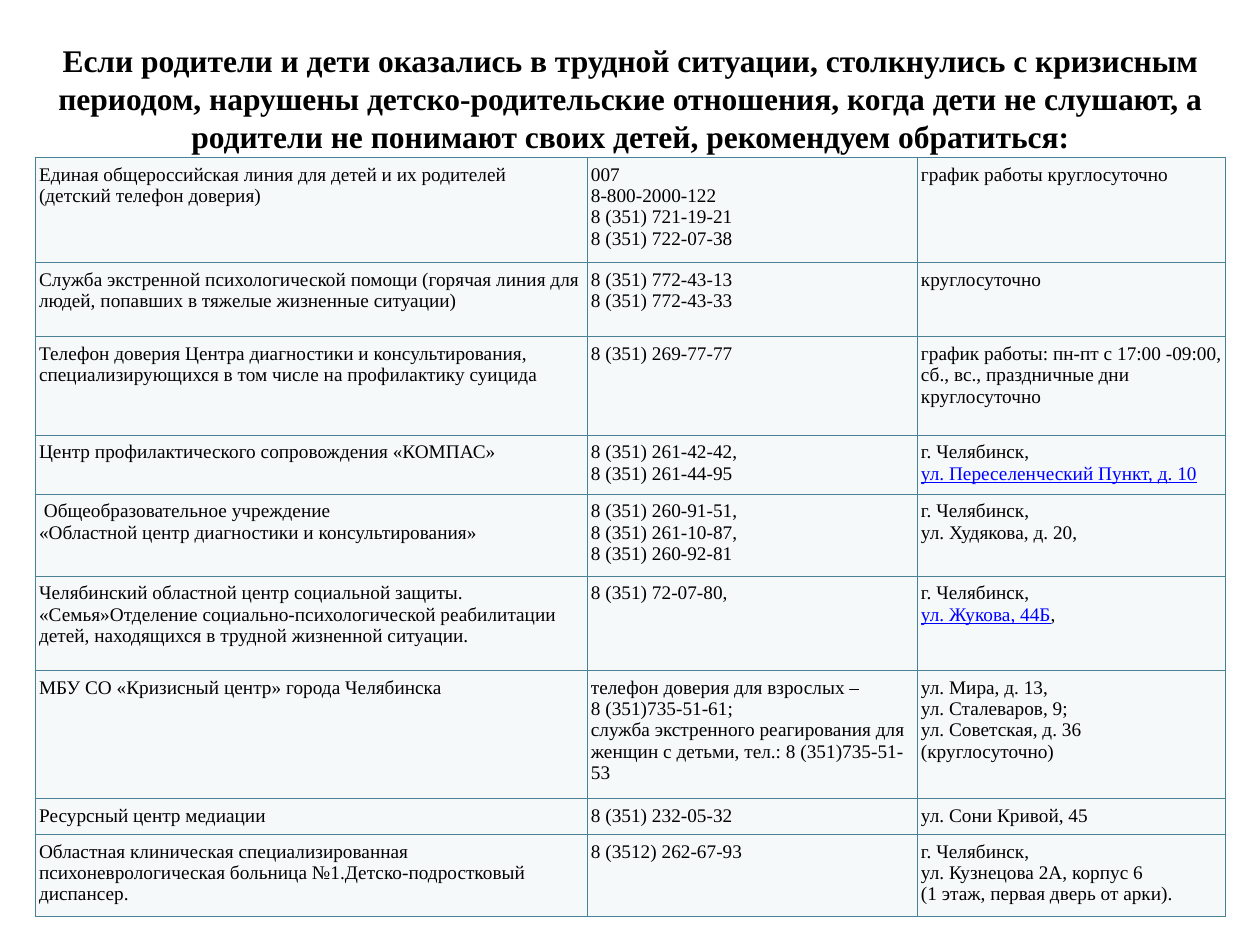
from typing import NamedTuple

from lxml import etree
from pptx import Presentation
from pptx.dml.color import RGBColor
from pptx.enum import text
from pptx.oxml import ns
from pptx.util import Inches, Pt

COLORS = {"text": "000000", "link": "0000FF", "cell": "F6F9FA", "border": "4A8295"}
FONT = "Times New Roman"
LEFT, TABLE_TOP, WIDTH = 0.28, 1.25, 9.45
COLUMN_WIDTHS = (4.38, 2.62, 2.45)
TITLE = ("Если родители и дети оказались в трудной ситуации, столкнулись с кризисным "
         "периодом, нарушены детско-родительские отношения, когда дети не слушают, а "
         "родители не понимают своих детей, рекомендуем обратиться:")


class Contact(NamedTuple):
    """One table row; a new line starts a paragraph."""
    height: float
    service: str
    phones: str
    details: str
    link: str = ""  # part of the details shown as a link


CONTACTS = [
    Contact(0.78, "Единая общероссийская линия для детей и их родителей (детский телефон доверия)",
            "007\n8-800-2000-122\n8 (351) 721-19-21\n8 (351) 722-07-38",
            "график работы круглосуточно"),
    Contact(0.59, "Служба экстренной психологической помощи (горячая линия для людей, "
            "попавших в тяжелые жизненные ситуации)",
            "8 (351) 772-43-13\n8 (351) 772-43-33", "круглосуточно"),
    Contact(0.78, "Телефон доверия Центра диагностики и консультирования, "
            "специализирующихся в том числе на профилактику суицида",
            "8 (351) 269-77-77",
            "график работы: пн-пт с 17:00 -09:00,\nсб., вс., праздничные дни круглосуточно"),
    Contact(0.44, "Центр профилактического сопровождения «КОМПАС»",
            "8 (351) 261-42-42,\n8 (351) 261-44-95",
            "г. Челябинск,\nул. Переселенческий Пункт, д. 10",
            "ул. Переселенческий Пункт, д. 10"),
    Contact(0.61, " Общеобразовательное учреждение\n"
            "«Областной центр диагностики и консультирования»",
            "8 (351) 260-91-51,\n8 (351) 261-10-87,\n8 (351) 260-92-81",
            "г. Челябинск,\nул. Худякова, д. 20,"),
    Contact(0.75, "Челябинский областной центр социальной защиты. «Семья»Отделение "
            "социально-психологической реабилитации детей, находящихся в трудной "
            "жизненной ситуации.",
            "8 (351) 72-07-80,", "г. Челябинск,\nул. Жукова, 44Б,", "ул. Жукова, 44Б"),
    Contact(0.95, "МБУ СО «Кризисный центр» города Челябинска",
            "телефон доверия для взрослых –\n8 (351)735-51-61;\nслужба экстренного "
            "реагирования для женщин с детьми, тел.: 8 (351)735-51-53",
            "ул. Мира, д. 13,\nул. Сталеваров, 9;\nул. Советская, д. 36\n(круглосуточно)"),
    Contact(0.27, "Ресурсный центр медиации", "8 (351) 232-05-32", "ул. Сони Кривой, 45"),
    Contact(0.61, "Областная клиническая специализированная психоневрологическая "
            "больница №1.Детско-подростковый диспансер.",
            "8 (3512) 262-67-93",
            "г. Челябинск,\nул. Кузнецова 2А, корпус 6\n(1 этаж, первая дверь от арки)."),
]


def format_run(run, size: float, color: str = "text", bold: bool = False) -> None:
    run.font.name = FONT
    run.font.size = Pt(size)
    run.font.bold = bold
    run.font.underline = color == "link"
    run.font.color.rgb = RGBColor.from_string(COLORS[color])


def add_title(slide) -> None:
    box = slide.shapes.add_textbox(Inches(LEFT), Inches(0), Inches(WIDTH), Inches(TABLE_TOP))
    frame = box.text_frame
    frame.word_wrap = True
    frame.vertical_anchor = text.MSO_ANCHOR.BOTTOM
    frame.margin_bottom = Inches(0.02)
    frame.text = TITLE
    paragraph = frame.paragraphs[0]
    paragraph.alignment = text.PP_ALIGN.CENTER
    paragraph.line_spacing = Pt(21.7)
    format_run(paragraph.runs[0], 18, bold=True)


def set_borders(cell) -> None:
    properties = cell._tc.get_or_add_tcPr()
    for index, side in enumerate(("lnL", "lnR", "lnT", "lnB")):
        line = etree.Element(ns.qn(f"a:{side}"), w=str(Pt(0.75)))
        fill = etree.SubElement(line, ns.qn("a:solidFill"))
        etree.SubElement(fill, ns.qn("a:srgbClr"), val=COLORS["border"])
        properties.insert(index, line)


def fill_cell(cell, content: str, link: str) -> None:
    cell.margin_left = cell.margin_right = Inches(0.03)
    cell.margin_top = cell.margin_bottom = Inches(0.05)
    cell.fill.solid()
    cell.fill.fore_color.rgb = RGBColor.from_string(COLORS["cell"])
    set_borders(cell)
    cell.text_frame.text = content
    for paragraph in cell.text_frame.paragraphs:
        run = paragraph.runs[0]
        is_link = bool(link) and run.text.startswith(link)
        if is_link and run.text != link:
            rest = paragraph.add_run()
            rest.text = run.text[len(link):]
            run.text = link
            format_run(rest, 11)
        format_run(run, 11, "link" if is_link else "text")


def add_contacts(slide, contacts: list[Contact]) -> None:
    height = sum(contact.height for contact in contacts)
    table = slide.shapes.add_table(len(contacts), len(COLUMN_WIDTHS), Inches(LEFT),
                                   Inches(TABLE_TOP), Inches(WIDTH), Inches(height)).table
    table.first_row = table.horz_banding = False
    for column, width in zip(table.columns, COLUMN_WIDTHS):
        column.width = Inches(width)
    for row, contact in zip(table.rows, contacts):
        row.height = Inches(contact.height)
        for cell, content in zip(row.cells, (contact.service, contact.phones, contact.details)):
            fill_cell(cell, content, contact.link)


def main() -> None:
    presentation = Presentation()
    presentation.slide_width, presentation.slide_height = Inches(10), Inches(7.5)
    slide = presentation.slides.add_slide(presentation.slide_layouts[6])
    # Heading
    add_title(slide)
    # Table of help services
    add_contacts(slide, CONTACTS)
    presentation.save("out.pptx")


if __name__ == "__main__":
    main()
